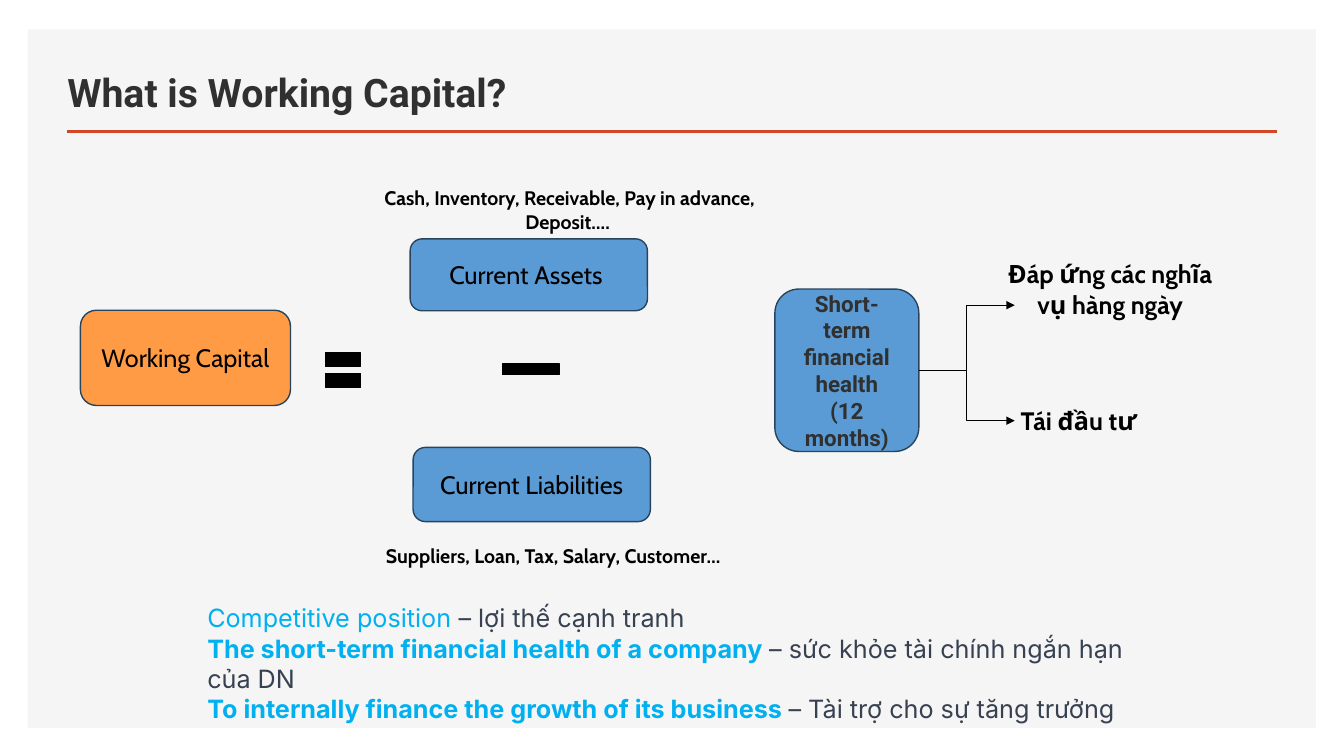
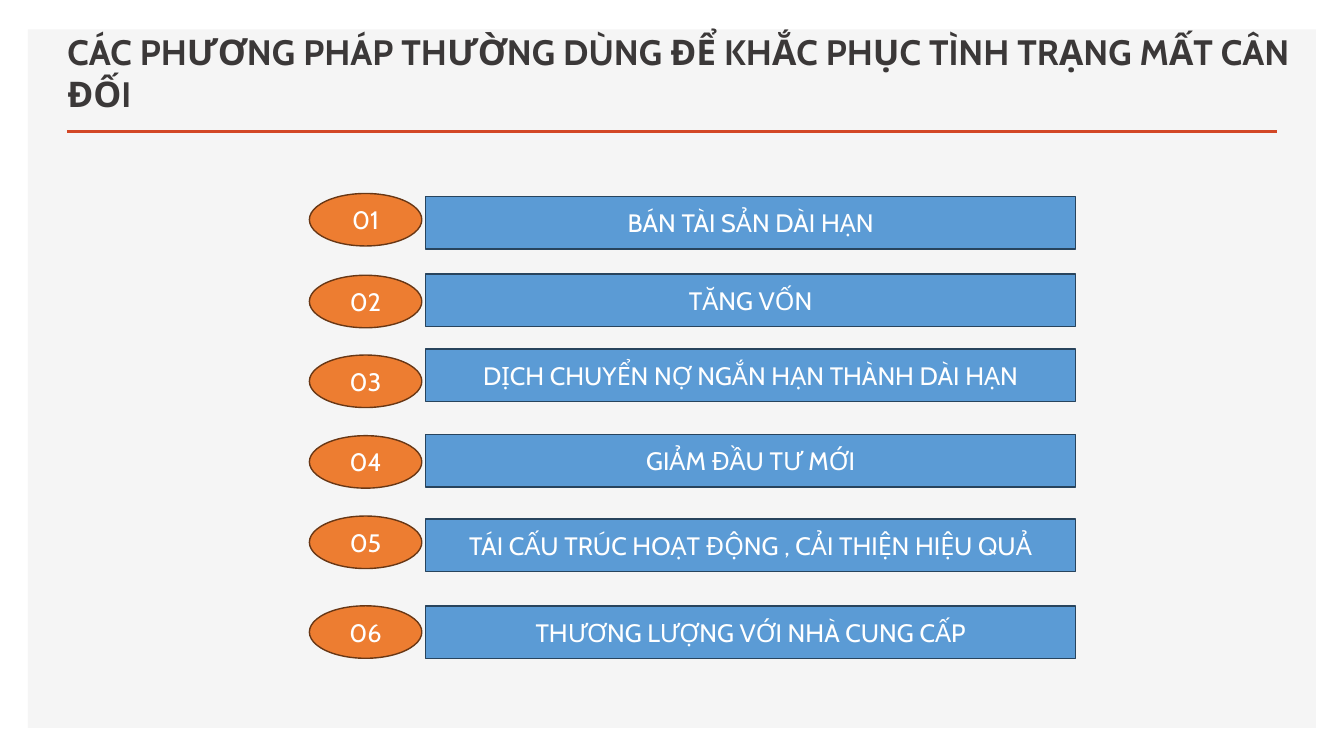
import pptx
import pptx.util
import pptx.dml.color
import pptx.enum.shapes
import pptx.enum.text
import pptx.oxml
import pptx.oxml.ns
import lxml.etree

Pt = pptx.util.Pt
FORM = pptx.enum.shapes.MSO_SHAPE
LINK = pptx.enum.shapes.MSO_CONNECTOR
ALIGN = pptx.enum.text.PP_ALIGN
ANCHOR = pptx.enum.text.MSO_ANCHOR

BLUE, NAVY = "5B9BD5", "28445D"
AMBER, ORANGE, BROWN = "FF9B45", "ED7D31", "683715"
RED, PALE = "D24726", "F5F5F5"
BLACK, WHITE, DARK, GREY = "000000", "FFFFFF", "303030", "3B3838"
CYAN, SLATE = "00B0F0", "374151"


def paint(target, tone):
    """Set a fill or font colour from a hex string."""
    if hasattr(target, "solid"):
        target.solid()
        target = target.fore_color
    else:
        target = target.color
    target.rgb = pptx.dml.color.RGBColor.from_string(tone)


def style(run, face, size, tone, bold=False):
    """Format one run."""
    run.font.name = face
    run.font.size = Pt(size)
    run.font.bold = bold
    paint(run.font, tone)


def write(frame, words, face, size, tone, bold=False, align=ALIGN.CENTER):
    """Fill a text frame with evenly styled paragraphs."""
    frame.word_wrap = True
    frame.text = words
    for para in frame.paragraphs:
        para.alignment = align
        for run in para.runs:
            style(run, face, size, tone, bold)


def shape(slide, form, box, fill, edge=None):
    """Add a flat preset shape."""
    item = slide.shapes.add_shape(form, *map(Pt, box))
    item.shadow.inherit = False
    paint(item.fill, fill)
    if edge:
        paint(item.line.fill, edge)
        item.line.width = Pt(1)
    else:
        item.line.fill.background()
    return item


def label(slide, box, words, size, align=ALIGN.CENTER):
    """Add a bold black caption."""
    frame = slide.shapes.add_textbox(*map(Pt, box)).text_frame
    write(frame, words, "Cabin", size, BLACK, True, align)


def line(slide, kind, start, end, tone, width, arrow=False):
    """Add a connector without shadow, with an arrowhead if asked."""
    item = slide.shapes.add_connector(kind, *map(Pt, start + end))
    paint(item.line.fill, tone)
    item.line.width = Pt(width)
    name = pptx.oxml.ns.qn
    if arrow:
        stroke = item.line.fill._xPr
        lxml.etree.SubElement(stroke, name("a:tailEnd"), type="triangle")
    props = item._element.spPr
    lxml.etree.SubElement(props, name("a:effectLst"))


def page(deck, title, width, face, size, tone):
    """Add a slide with the shared panel, rule and title."""
    slide = deck.slides.add_slide(deck.slide_layouts[6])
    shape(slide, FORM.RECTANGLE, (20, 21, 920, 499), PALE)
    line(slide, LINK.STRAIGHT, (47.8, 94), (912.2, 94), RED, 2)
    box = (41, 35.3, width, 50.4)
    frame = slide.shapes.add_textbox(*map(Pt, box)).text_frame
    frame.vertical_anchor = ANCHOR.BOTTOM
    write(frame, title, face, size, tone, True, ALIGN.LEFT)
    return slide


def sums(slide, x, y):
    """Draw the working capital equation from its top left corner."""
    cards = [
        ("Working Capital", (0, 92, 150, 68), AMBER),
        ("Current Assets ", (235.5, 41, 169.5, 51.4), BLUE),
        ("Current Liabilities", (237.6, 190, 169.5, 53), BLUE),
    ]
    for words, (left, top, wide, high), fill in cards:
        box = (x + left, y + top, wide, high)
        card = shape(slide, FORM.ROUNDED_RECTANGLE, box, fill, NAVY)
        write(card.text_frame, words, "Cabin", 18, BLACK)
    shape(slide, FORM.MATH_EQUAL, (x + 170.5, y + 113.5, 34, 42.5), BLACK, BLACK)
    shape(slide, FORM.MATH_MINUS, (x + 294, y + 118, 55.5, 32.4), BLACK, BLACK)
    label(slide, (x + 181, y, 337, 41),
          "Cash, Inventory, Receivable, Pay in advance, Deposit…. ", 14)
    label(slide, (x + 211, y + 255.5, 337, 24.5),
          "Suppliers, Loan, Tax, Salary, Customer…", 14, ALIGN.LEFT)


def health(slide, x, y):
    """Draw the health card and the two goals it leads to."""
    wide, high = 102.8, 116
    card = shape(slide, FORM.ROUNDED_RECTANGLE, (x, y, wide, high), BLUE, NAVY)
    write(card.text_frame, "Short-term financial health\n(12 months)",
          "Roboto", 16, DARK, True)
    start = (x + wide, y + high / 2)
    for rise in (11.5, 94):
        line(slide, LINK.ELBOW, start, (x + 171.3, y + rise), BLACK, 0.5, True)
    label(slide, (x + 157, y - 25.2, 165, 72.7), "Đáp ứng các nghĩa vụ hàng ngày", 18)
    label(slide, (x + 132.5, y + 79.2, 169, 29), "Tái đầu tư", 18)


def notes(slide, box):
    """List the benefits with a coloured lead and a plain gloss."""
    rows = [
        ("Competitive position ", "– lợi thế cạnh tranh", False),
        ("The short-term financial health of a company ",
         "– sức khỏe tài chính ngắn hạn của DN", True),
        ("To internally finance the growth of its business ",
         "– Tài trợ cho sự tăng trưởng", True),
    ]
    frame = slide.shapes.add_textbox(*map(Pt, box)).text_frame
    frame.word_wrap = True
    frame.text = "\n".join(lead for lead, _, _ in rows)
    for para, (_, gloss, bold) in zip(frame.paragraphs, rows):
        style(para.runs[0], "Inter", 18, CYAN, bold)
        tail = para.add_run()
        tail.text = gloss
        style(tail, "Inter", 18, SLATE)


def steps(slide, x, y):
    """Draw numbered ovals beside bars, each with its own drop."""
    rows = [
        ("BÁN TÀI SẢN DÀI HẠN", 0, 2.2),
        ("TĂNG VỐN", 58.4, 57.4),
        ("DỊCH CHUYỂN NỢ NGẮN HẠN THÀNH DÀI HẠN", 115.4, 111),
        ("GIẢM ĐẦU TƯ MỚI", 173, 172.2),
        ("TÁI CẤU TRÚC HOẠT ĐỘNG , CẢI THIỆN HIỆU QUẢ", 230.4, 232.6),
        ("THƯƠNG LƯỢNG VỚI NHÀ CUNG CẤP", 294.5, 294.8),
    ]
    high = 37.5
    for num, (words, drop, fall) in enumerate(rows, 1):
        bar = shape(slide, FORM.RECTANGLE, (x + 83, y + fall, 464.4, high), BLUE, NAVY)
        oval = shape(slide, FORM.OVAL, (x, y + drop, 80.3, high), ORANGE, BROWN)
        write(bar.text_frame, words, "Cabin", 18, WHITE)
        write(oval.text_frame, f"{num:02}", "Cabin", 18, WHITE)


def main():
    """Build both slides and save the deck."""
    deck = pptx.Presentation()
    deck.slide_width, deck.slide_height = Pt(960), Pt(540)
    first = page(deck, "What is Working Capital?", 541.5, "Roboto", 28, DARK)
    sums(first, 57.5, 129.6)
    health(first, 553.5, 206.5)
    notes(first, (141, 427, 678, 72.7))
    title = "CÁC PHƯƠNG PHÁP THƯỜNG DÙNG ĐỂ KHẮC PHỤC TÌNH TRẠNG MẤT CÂN ĐỐI"
    second = page(deck, title, 907, "Cabin", 25.2, GREY)
    steps(second, 221, 138.2)
    deck.save("out.pptx")


if __name__ == "__main__":
    main()
